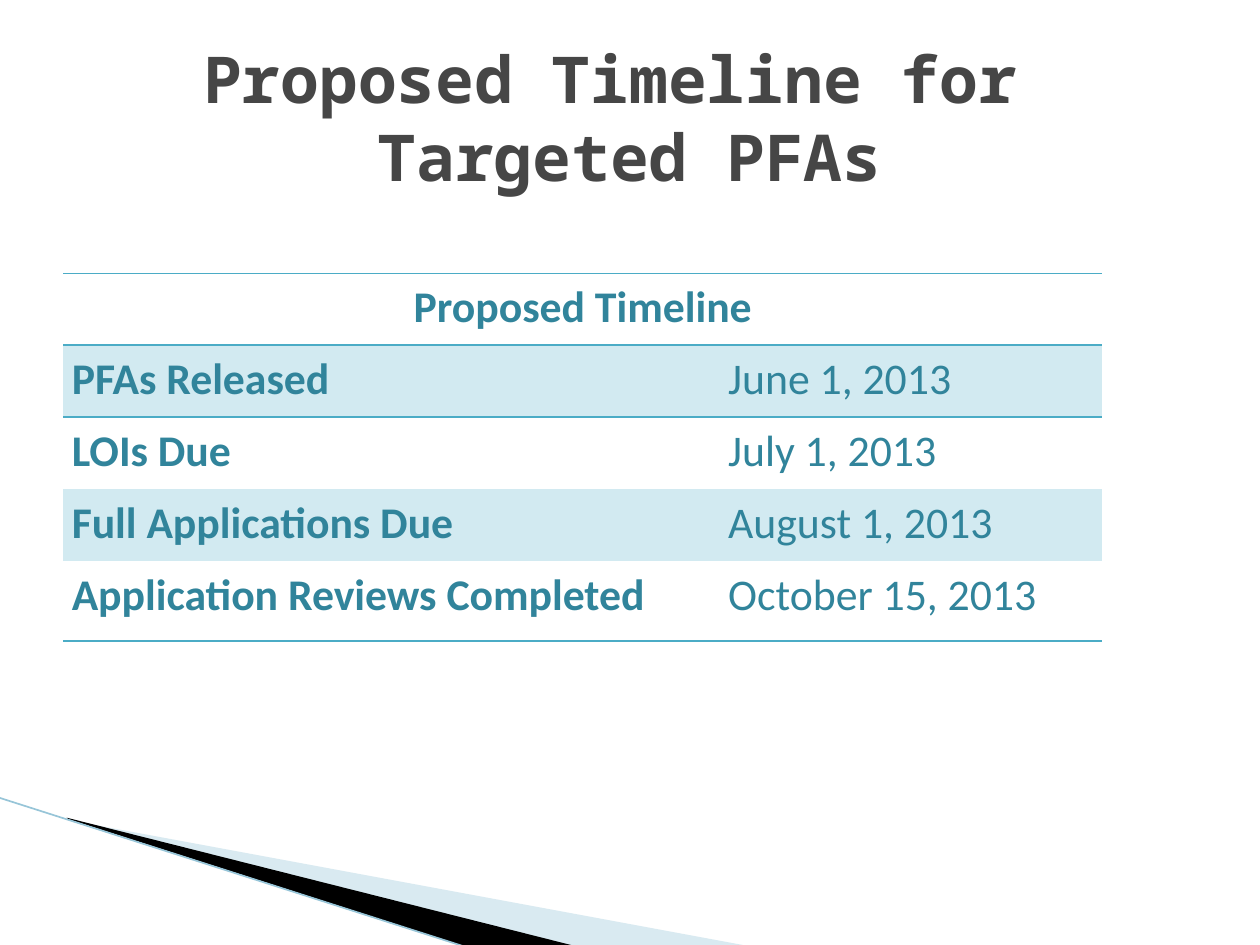
from lxml import etree
from pptx import Presentation
from pptx.dml.color import RGBColor
from pptx.enum.text import MSO_ANCHOR, PP_ALIGN
from pptx.oxml.ns import qn
from pptx.util import Inches, Pt

CENTER, LEFT = PP_ALIGN.CENTER, PP_ALIGN.LEFT
MIDDLE, TOP = MSO_ANCHOR.MIDDLE, MSO_ANCHOR.TOP
NO_TABLE_STYLE = "{2D5ABB26-0587-4C30-8999-92F81FD0307C}"

COLORS = {
    "title": "464646",
    "text": "31849B",
    "rule": "4BACC6",
    "band": "D2EAF1",
    "light_wedge": "A0CBDC",
    "dark_wedge": "000000",
    "edge": "97C5D8",
}

HEADING = "Proposed Timeline"
MILESTONES = [
    ("PFAs Released", "June 1, 2013"),
    ("LOIs Due", "July 1, 2013"),
    ("Full Applications Due", "August 1, 2013"),
    ("Application Reviews Completed", "October 15, 2013"),
]


def rgb(name):
    return RGBColor.from_string(COLORS[name])


def style_font(paragraph, face, size, color, bold):
    font = paragraph.font
    font.name, font.size, font.bold = face, Pt(size), bold
    font.color.rgb = rgb(color)


def add_wedge(slide, left, top, points, color, opacity=100):
    corners = [(Inches(left + x), Inches(top + y)) for x, y in points]
    builder = slide.shapes.build_freeform(*corners[0])
    builder.add_line_segments(corners[1:], close=True)
    wedge = builder.convert_to_shape()
    wedge.shadow.inherit = False
    wedge.line.fill.background()
    wedge.fill.solid()
    wedge.fill.fore_color.rgb = rgb(color)
    if opacity < 100:
        tint = wedge.fill._xPr.find(qn("a:solidFill"))[0]
        etree.SubElement(tint, qn("a:alpha"), val=str(opacity * 1000))


def add_corner_sweep(slide, left, top):
    add_wedge(slide, left, top,
              [(0.56, 0.18), (5.96, 1.18), (4.57, 1.18), (0.56, 0.17)],
              "light_wedge", 40)
    add_wedge(slide, left, top,
              [(0.54, 0.16), (4.58, 1.18), (3.73, 1.19), (0.55, 0.17)],
              "dark_wedge")
    edge = slide.shapes.add_connector(
        1, Inches(left), Inches(top), Inches(left + 3.72), Inches(top + 1.19))
    edge.line.color.rgb = rgb("edge")
    edge.line.width = Pt(0.95)
    etree.SubElement(edge._element.spPr, qn("a:effectLst"))


def add_title(slide, left, top, width, height):
    box = slide.shapes.add_textbox(
        Inches(left), Inches(top), Inches(width), Inches(height))
    frame = box.text_frame
    frame.word_wrap = True
    frame.vertical_anchor = MIDDLE
    title = frame.paragraphs[0]
    title.text = "Proposed Timeline for \vTargeted PFAs"
    title.alignment = CENTER
    style_font(title, "Noto Sans Mono", 36.9, "title", True)


def add_rule(cell, side):
    rule = etree.SubElement(
        cell._tc.get_or_add_tcPr(), qn(f"a:ln{side}"), w=str(Pt(1)))
    fill = etree.SubElement(rule, qn("a:solidFill"))
    etree.SubElement(fill, qn("a:srgbClr"), val=COLORS["rule"])


def fill_cell(cell, text, bold, alignment, sides, banded):
    for side in sides:
        add_rule(cell, side)
    if banded:
        cell.fill.solid()
        cell.fill.fore_color.rgb = rgb("band")
    else:
        cell.fill.background()
    cell.margin_left = cell.margin_right = Inches(0.07)
    cell.margin_top = cell.margin_bottom = 0
    cell.vertical_anchor = TOP
    entry = cell.text_frame.paragraphs[0]
    entry.text = text
    entry.alignment = alignment
    entry.line_spacing = 1.15
    entry.space_after = Pt(10)
    style_font(entry, "Calibri", 25, "text", bold)


def add_timeline(slide, left, top, width, height):
    rows = [(HEADING, "")] + MILESTONES
    last = len(rows) - 1
    row_height, date_width = 0.57, 3.04
    frame = slide.shapes.add_table(
        len(rows), 2, Inches(left), Inches(top), Inches(width), Inches(height))
    timeline = frame.table
    timeline.first_row = timeline.horz_banding = False
    timeline._tbl.tblPr.find(qn("a:tableStyleId")).text = NO_TABLE_STYLE
    timeline.columns[0].width = Inches(width - date_width)
    timeline.columns[1].width = Inches(date_width)
    rules = {0: "TB", 1: "T", last: "B"}
    for r, texts in enumerate(rows):
        timeline.rows[r].height = Inches(
            height - last * row_height if r == last else row_height)
        for c, text in enumerate(texts):
            fill_cell(timeline.cell(r, c), text, r == 0 or c == 0,
                      CENTER if r == 0 else LEFT, rules.get(r, ""), r % 2 == 1)
    timeline.cell(0, 0).merge(timeline.cell(0, 1))


def main():
    deck = Presentation()
    deck.slide_width, deck.slide_height = Inches(10), Inches(7.5)
    slide = deck.slides.add_slide(deck.slide_layouts[6])
    add_corner_sweep(slide, -0.01, 6.33)
    add_title(slide, 0.5, 0.3, 9, 1.25)
    add_timeline(slide, 0.5, 2.17, 8.25, 2.92)
    deck.save("out.pptx")


if __name__ == "__main__":
    main()
